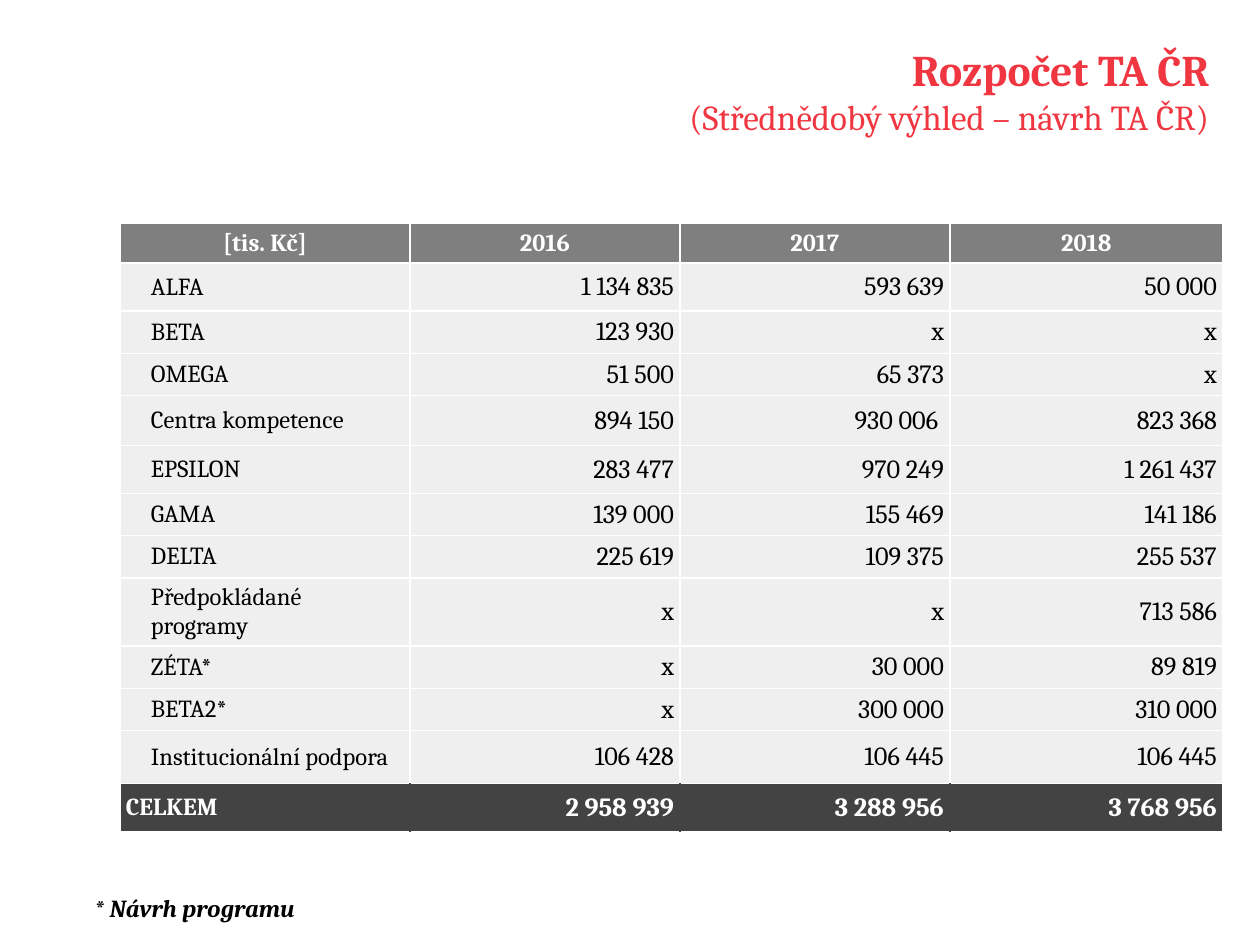
"""Builds the budget outlook slide: a title, a table of programmes and a footnote."""
from lxml import etree
from pptx import Presentation
from pptx.dml.color import RGBColor
from pptx.enum.text import MSO_ANCHOR, MSO_AUTO_SIZE, PP_ALIGN
from pptx.oxml.ns import qn
from pptx.util import Pt

LEFT, CENTER, RIGHT = PP_ALIGN.LEFT, PP_ALIGN.CENTER, PP_ALIGN.RIGHT
MIDDLE = MSO_ANCHOR.MIDDLE
FIT_SHAPE = MSO_AUTO_SIZE.SHAPE_TO_FIT_TEXT

RED = RGBColor(0xF0, 0x37, 0x41)
WHITE = RGBColor(0xFF, 0xFF, 0xFF)
BLACK = RGBColor(0x00, 0x00, 0x00)
HEADER_GRAY = RGBColor(0x7F, 0x7F, 0x7F)
BODY_GRAY = RGBColor(0xEF, 0xEF, 0xEF)
TOTAL_GRAY = RGBColor(0x43, 0x43, 0x43)

PX = 914400 // 126
FONT = "Cambria"
CELL_INSET = 6
BODY_INDENT = 25

HEADING = "Rozpočet TA ČR"
SUBHEADING = "(Střednědobý výhled – návrh TA ČR)"
FOOTNOTE = "* Návrh programu"
COLUMN_WIDTHS = [290, 270, 270, 273]
BUDGET = [
    (28, "[tis. Kč]", "2016", "2017", "2018"),
    (48, "ALFA", "1 134 835", "593 639", "50 000"),
    (28, "BETA", "123 930", "x", "x"),
    (28, "OMEGA", "51 500", "65 373", "x"),
    (50, "Centra kompetence", "894 150", "930 006 ", "823 368"),
    (48, "EPSILON", "283 477", "970 249", "1 261 437"),
    (28, "GAMA", "139 000", "155 469", "141 186"),
    (28, "DELTA", "225 619", "109 375", "255 537"),
    (50, "Předpokládané programy", "x", "x", "713 586"),
    (28, "ZÉTA*", "x", "30 000", "89 819"),
    (28, "BETA2*", "x", "300 000", "310 000"),
    (53, "Institucionální podpora", "106 428", "106 445", "106 445"),
    (48, "CELKEM", "2 958 939", "3 288 956", "3 768 956"),
]


def px(*lengths):
    return [length * PX for length in lengths]


def write(paragraph, text, size=14, color=BLACK, bold=False, italic=False, align=LEFT, indent=0):
    paragraph.alignment = align
    if indent:
        properties = paragraph._p.get_or_add_pPr()
        properties.set("marL", str(indent * PX))
        properties.set("indent", "0")
    run = paragraph.add_run()
    run.text = text
    font = run.font
    font.name, font.size, font.bold, font.italic = FONT, Pt(size), bold, italic
    font.color.rgb = color


def set_borders(cell, **colors):
    properties = cell._tc.get_or_add_tcPr()
    for side in "LRTB":
        line = etree.SubElement(properties, qn(f"a:ln{side}"), w=str(Pt(1)))
        fill = etree.SubElement(line, qn("a:solidFill"))
        etree.SubElement(fill, qn("a:srgbClr"), val=str(colors.get(side, WHITE)))


def add_title(slide):
    title = slide.shapes.title
    title.left, title.top, title.width, title.height = px(210, 0, 1012, 180)
    title.text_frame.vertical_anchor = MIDDLE
    paragraph = title.text_frame.paragraphs[0]
    write(paragraph, HEADING, size=25, color=RED, bold=True, align=RIGHT)
    paragraph.add_line_break()
    write(paragraph, SUBHEADING, size=20, color=RED, align=RIGHT)


def fill_cell(cell, text, row, column):
    last_column = len(COLUMN_WIDTHS) - 1
    is_header, is_total = row == 0, row == len(BUDGET) - 1
    is_body = not (is_header or is_total)
    borders = {}
    if is_total and column > 0:
        borders["L"] = TOTAL_GRAY
    if is_total and column < last_column:
        borders["R"] = TOTAL_GRAY
    set_borders(cell, **borders)
    cell.fill.solid()
    cell.fill.fore_color.rgb = HEADER_GRAY if is_header else TOTAL_GRAY if is_total else BODY_GRAY
    cell.vertical_anchor = MIDDLE
    cell.margin_left = cell.margin_right = cell.margin_top = cell.margin_bottom = CELL_INSET * PX
    write(
        cell.text_frame.paragraphs[0],
        text,
        size=14 if is_header or column == 0 else 15,
        color=BLACK if is_body else WHITE,
        bold=not is_body,
        align=CENTER if is_header else RIGHT if column else LEFT,
        indent=BODY_INDENT if is_body else 0,
    )


def add_budget(slide):
    frame = slide.shapes.add_table(
        len(BUDGET), len(COLUMN_WIDTHS), *px(120, 223, sum(COLUMN_WIDTHS), 625)
    )
    table = frame.table
    for column, width in zip(table.columns, COLUMN_WIDTHS):
        column.width = width * PX
    for row, (height, *texts) in enumerate(BUDGET):
        table.rows[row].height = height * PX
        for column, text in enumerate(texts):
            fill_cell(table.cell(row, column), text, row, column)
    frame.height = 625 * PX


def add_footnote(slide):
    footnote = slide.shapes.add_textbox(*px(82, 887, 229, 43)).text_frame
    footnote.word_wrap = False
    footnote.auto_size = FIT_SHAPE
    write(footnote.paragraphs[0], FOOTNOTE, bold=True, italic=True)


def main():
    presentation = Presentation()
    presentation.slide_width, presentation.slide_height = px(1260, 945)
    slide = presentation.slides.add_slide(presentation.slide_layouts[5])
    add_title(slide)
    add_budget(slide)
    add_footnote(slide)
    presentation.save("out.pptx")


if __name__ == "__main__":
    main()
